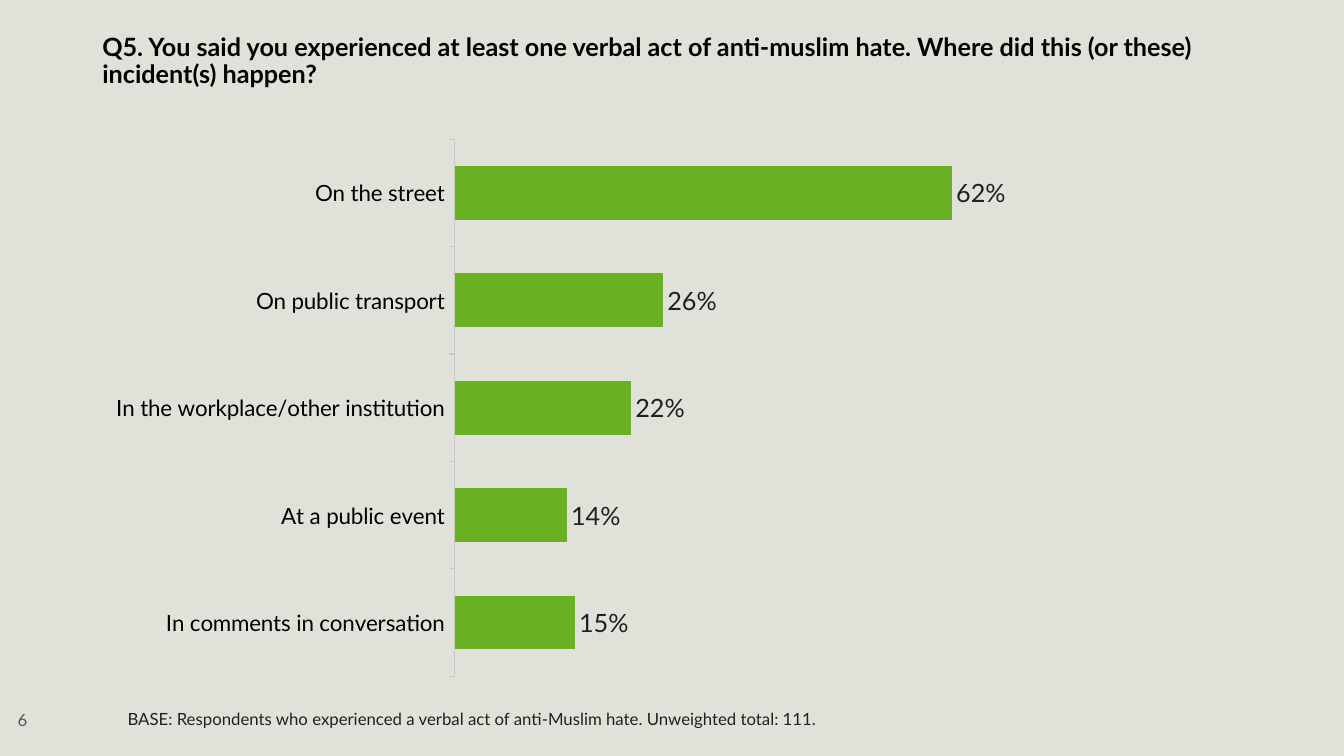
from pptx import Presentation
from pptx import util as u
from pptx.chart.data import CategoryChartData
from pptx.dml.color import RGBColor
from pptx.enum import chart as ch, text as tx

GREEN, INK, BLACK = "6AB023", "1F2021", "000000"
PLACES = {
    "On the street": 0.62,
    "On public transport": 0.26,
    "In the workplace/other institution": 0.22,
    "At a public event": 0.14,
    "In comments in conversation": 0.15,
}


def tint(code):
    """Turn a hex string into a colour."""
    return RGBColor.from_string(code)


def apply(item, form):
    """Set each attribute named in a dict of format values."""
    for name, value in form.items():
        setattr(item, name, value)


def style(font, size, code, bold=False):
    """Give a font its face, size, weight and colour."""
    apply(font, {"name": "Lato", "size": u.Pt(size), "bold": bold})
    font.color.rgb = tint(code)


def label(slide, box, words, size, code, bold=False, line=0.9, base=3.6, top=3.6):
    """Place one paragraph of wrapped text in a box and return it."""
    frame = slide.shapes.add_textbox(*map(u.Pt, box)).text_frame
    apply(frame, {
        "word_wrap": True,
        "vertical_anchor": tx.MSO_ANCHOR.MIDDLE,
        "margin_left": u.Pt(7.2),
        "margin_right": u.Pt(7.2),
        "margin_top": u.Pt(top),
        "margin_bottom": u.Pt(base),
    })
    para = frame.paragraphs[0]
    para.line_spacing = line
    run = para.add_run()
    run.text = words
    style(run.font, size, code, bold)
    return para


def title(slide, box):
    """Place the survey question at the top of its box."""
    label(slide, box, "Q5. You said you experienced at least one verbal act of "
          "anti-muslim hate. Where did this (or these) incident(s) happen?",
          18, BLACK, True, base=21, top=0)


def footer(slide, box):
    """Place the page number and the base note along one row."""
    left, top, width, height = box
    label(slide, (left, top, 44, height), "6", 12, "55585A")
    note = label(slide, (left + 60.5, top, width - 60.5, height),
                 "BASE: Respondents who experienced a verbal act of "
                 "anti-Muslim hate. Unweighted total: 111.", 12, INK, line=0.8)
    props = note._p.get_or_add_pPr()
    props.set("marL", str(u.Pt(36)))
    props.set("indent", str(u.Pt(-18)))


def bars(slide, box):
    """Draw the bar chart of places in its box."""
    data = CategoryChartData(number_format="0%")
    data.categories = list(PLACES)
    data.add_series("Series 1", list(PLACES.values()))
    chart = slide.shapes.add_chart(
        ch.XL_CHART_TYPE.BAR_CLUSTERED, *map(u.Pt, box), data).chart
    apply(chart, {"has_legend": False, "has_title": False})
    style(chart.font, 18, INK)

    cats = chart.category_axis
    apply(cats, {
        "reverse_order": True,
        "has_major_gridlines": False,
        "major_tick_mark": ch.XL_TICK_MARK.OUTSIDE,
        "tick_label_position": ch.XL_TICK_LABEL_POSITION.LOW,
    })
    style(cats.tick_labels.font, 16, BLACK)
    cats.format.line.color.rgb = tint("C8C8C8")
    cats.format.line.width = u.Pt(0.75)
    apply(chart.value_axis, {
        "visible": False,
        "has_major_gridlines": False,
        "minimum_scale": 0,
        "maximum_scale": 1,
    })

    plot = chart.plots[0]
    apply(plot, {"gap_width": 100, "vary_by_categories": False,
                 "has_data_labels": True})
    marks = plot.data_labels
    apply(marks, {
        "show_value": True,
        "number_format": "0%",
        "number_format_is_linked": False,
        "position": ch.XL_LABEL_POSITION.OUTSIDE_END,
    })
    style(marks.font, 18, INK)
    fill = plot.series[0].format.fill
    fill.solid()
    fill.fore_color.rgb = tint(GREEN)


def main():
    """Build the slide and save it."""
    deck = Presentation()
    apply(deck, {"slide_width": u.Pt(960), "slide_height": u.Pt(540)})
    slide = deck.slides.add_slide(deck.slide_layouts[6])
    back = slide.background.fill
    back.solid()
    back.fore_color.rgb = tint("E0E2DA")
    title(slide, (66, 29, 828, 51))
    bars(slide, (66, 91.5, 849, 399.5))
    footer(slide, (5.5, 500.5, 810, 28.5))
    deck.save("out.pptx")


if __name__ == "__main__":
    main()
